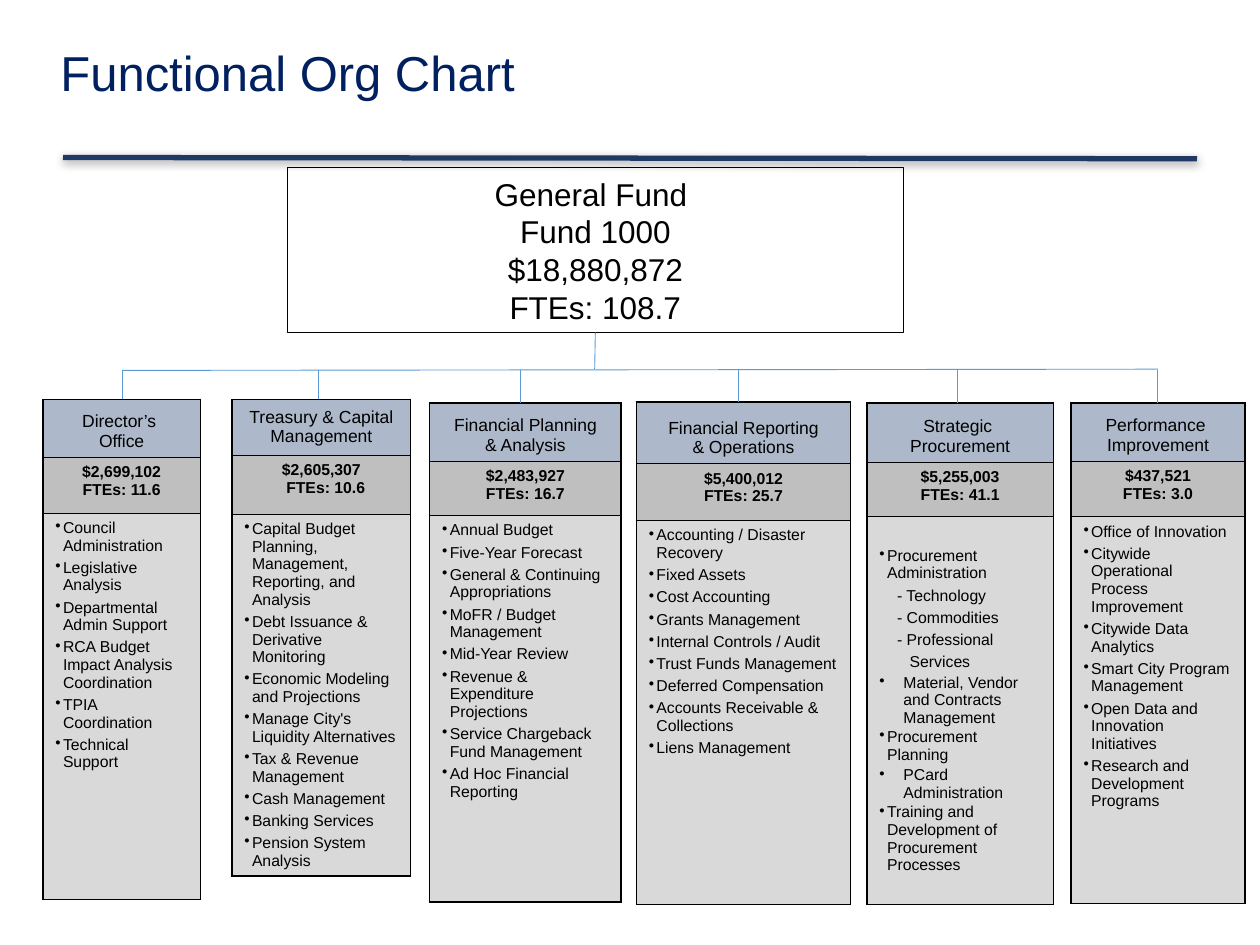
from lxml.etree import SubElement
from pptx import Presentation
from pptx.dml.color import RGBColor
from pptx.enum.shapes import MSO_CONNECTOR, MSO_SHAPE
from pptx.enum.text import MSO_ANCHOR, MSO_AUTO_SIZE, PP_ALIGN
from pptx.oxml.ns import qn
from pptx.util import Inches, Pt

BLACK, NAVY, BLUE = "000000", "002060", "5B9BD5"
FILLS = ("ADB9CA", "BFBFBF", "D9D9D9")
BAR = 29.4
TOP, MID, LOW = MSO_ANCHOR.TOP, MSO_ANCHOR.MIDDLE, MSO_ANCHOR.BOTTOM

# Item kinds: left indent, first-line indent, spaced, bulleted
KINDS = {
    "main": (0.6, -0.6, True, True),
    "wide": (1.9, -1.9, False, True),
    "dash": (1.4, 0, True, False),
    "tail": (2.4, 0, True, False),
}

# Units: left, top, width, row heights, drop x, head anchor, body anchor
UNITS = [
    (3.4, 31.7, 12.5, (4.6, 4.4, 30.7), 9.7, LOW, TOP,
     ["Director’s ", "Office"], "$2,699,102", "FTEs: 11.6",
     ["Council Administration", "Legislative Analysis",
      "Departmental Admin Support",
      "RCA Budget Impact Analysis Coordination",
      "TPIA Coordination", "Technical Support"]),
    (18.4, 31.7, 14.2, (4.4, 4.7, 27.2), 25.3, MID, TOP,
     ["Treasury & Capital Management"], "$2,605,307", "FTEs: 10.6",
     ["Capital Budget Planning, Management, Reporting, and Analysis",
      "Debt Issuance & Derivative Monitoring",
      "Economic Modeling and Projections",
      "Manage City's Liquidity Alternatives",
      "Tax & Revenue Management", "Cash Management",
      "Banking Services", "Pension System Analysis"]),
    (34.1, 32, 15.2, (4.6, 4.3, 30.7), 41.3, LOW, TOP,
     ["Financial Planning", "& Analysis"], "$2,483,927", "FTEs: 16.7",
     ["Annual Budget", "Five-Year Forecast",
      "General & Continuing Appropriations",
      "MoFR / Budget Management", "Mid-Year Review",
      "Revenue & Expenditure Projections",
      "Service Chargeback Fund Management",
      "Ad Hoc Financial Reporting"]),
    (50.5, 31.9, 17, (4.9, 4.5, 30.5), 58.6, LOW, TOP,
     ["Financial Reporting", "& Operations"], "$5,400,012", "FTEs: 25.7",
     ["Accounting / Disaster Recovery", "Fixed Assets",
      "Cost Accounting", "Grants Management",
      "Internal Controls / Audit", "Trust Funds Management",
      "Deferred Compensation", "Accounts Receivable & Collections",
      "Liens Management"]),
    (68.8, 32, 14.8, (4.7, 4.3, 30.8), 76, LOW, MID,
     ["Strategic ", "Procurement"], "$5,255,003", "FTEs: 41.1",
     ["Procurement Administration", ("dash", "- Technology"),
      ("dash", "- Commodities"), ("dash", "- Professional"),
      ("tail", "Services"),
      ("wide", "Material, Vendor and Contracts Management"),
      "Procurement Planning", ("wide", "PCard Administration"),
      "Training and Development of Procurement Processes"]),
    (85, 32, 13.8, (4.6, 4.4, 30.7), 91.9, LOW, TOP,
     ["Performance ", "Improvement"], "$437,521", "FTEs: 3.0",
     ["Office of Innovation", "Citywide Operational Process Improvement",
      "Citywide Data Analytics", "Smart City Program Management",
      "Open Data and Innovation Initiatives",
      "Research and Development Programs"]),
]


def grid(*cells):
    """Turn counts of grid cells, 100 by 75 on the slide, into lengths."""
    return [Inches(n / 10) for n in cells]


def tint(code):
    """Turn a hex string into a colour."""
    return RGBColor.from_string(code)


def write(para, text, size, bold=False, color=BLACK):
    """Add one run to a paragraph."""
    run = para.add_run()
    run.text = text
    font = run.font
    font.name, font.size, font.bold = "Arial", Pt(size), bold
    font.color.rgb = tint(color)


def paras(frame, count):
    """Return the given number of paragraphs of a frame."""
    return [frame.paragraphs[0]] + [
        frame.add_paragraph() for _ in range(count - 1)]


def center(frame, lines, size, bold=False):
    """Write centred lines."""
    for para, text in zip(paras(frame, len(lines)), lines):
        para.alignment = PP_ALIGN.CENTER
        write(para, text, size, bold)


def bullets(frame, items):
    """Write the duties of one unit."""
    for pos, (para, item) in enumerate(zip(paras(frame, len(items)), items)):
        kind, text = ("main", item) if isinstance(item, str) else item
        left, first, spaced, mark = KINDS[kind]
        props = para._p.get_or_add_pPr()
        for name, size in zip(("marL", "indent"), grid(left, first)):
            props.set(name, str(size))
        if mark:
            SubElement(props, qn("a:buChar"), char="•")
        if spaced:
            para.space_before = Pt(1 if pos else 0)
            para.space_after = Pt(1.6)
        write(para, text, 9)


def edge(cell, row):
    """Draw the borders of a cell, thick on the table's outside."""
    props = cell._tc.get_or_add_tcPr()
    widths = {"L": 1, "R": 1, "T": 0.25 if row else 1,
              "B": 1 if row == 2 else 0.25}
    for side, width in widths.items():
        line = SubElement(props, qn("a:ln" + side), w=str(Pt(width)))
        SubElement(SubElement(line, qn("a:solidFill")),
                   qn("a:srgbClr"), val=BLACK)


def unit(shapes, left, top, width, rows, drop, head, body,
         name, cost, staff, items):
    """Add one unit's table and its drop line."""
    table = shapes.add_table(
        3, 1, *grid(left, top, width, sum(rows))).table
    table.first_row = table.horz_banding = False
    for pos, high in enumerate(grid(*rows)):
        table.rows[pos].height = high
        cell = table.cell(pos, 0)
        edge(cell, pos)
        cell.fill.solid()
        cell.fill.fore_color.rgb = tint(FILLS[pos])
        cell.vertical_anchor = (head, TOP, body)[pos]
    center(table.cell(0, 0).text_frame, name, 10)
    center(table.cell(1, 0).text_frame, [cost, staff], 9, True)
    bullets(table.cell(2, 0).text_frame, items)
    if len(name) == 1:
        para = table.cell(1, 0).text_frame.paragraphs[1]
        para._p.get_or_add_pPr().set("marL", str(Pt(5)))
    link(shapes, drop, top, drop, BAR)


def link(shapes, *ends, color=BLUE, width=0.5):
    """Add a straight line and return it with its effect list."""
    line = shapes.add_connector(MSO_CONNECTOR.STRAIGHT, *grid(*ends))
    line.line.color.rgb = tint(color)
    line.line.width = Pt(width)
    return line, SubElement(line._element.spPr, qn("a:effectLst"))


def rule(shapes):
    """Add the shaded rule below the title."""
    _, list_ = link(shapes, 5, 12.5, 95, 12.6, color="203864", width=3)
    shade = SubElement(list_, qn("a:outerShdw"), blurRad=str(Pt(5)),
                       dist=str(Pt(1.6)), dir="5400000", rotWithShape="0")
    ink = SubElement(shade, qn("a:srgbClr"), val=BLACK)
    SubElement(ink, qn("a:alpha"), val="38000")


def title(shape, text):
    """Place and fill the title."""
    shape.left, shape.top, shape.width, shape.height = grid(4.8, 3.4, 68.6, 9.2)
    frame = shape.text_frame
    frame.auto_size = MSO_AUTO_SIZE.NONE
    frame.vertical_anchor = TOP
    frame.margin_left = frame.margin_right = frame.margin_bottom = 0
    frame.margin_top = Inches(0.05)
    para = frame.paragraphs[0]
    para.alignment, para.line_spacing = PP_ALIGN.LEFT, 0.9
    write(para, text, 28, color=NAVY)


def fund(shapes, lines):
    """Add the fund box and return it."""
    box = shapes.add_shape(MSO_SHAPE.RECTANGLE, *grid(22.8, 13.3, 48.9, 13.1))
    box.shadow.inherit = False
    box.fill.background()
    box.line.color.rgb = tint(BLACK)
    box.line.width = Pt(0.75)
    center(box.text_frame, lines, 18)
    return box


def main():
    """Build the slide."""
    deck = Presentation()
    deck.slide_width, deck.slide_height = grid(100, 75)
    shapes = deck.slides.add_slide(deck.slide_layouts[5]).shapes
    rule(shapes)
    title(shapes.title, "Functional Org Chart")
    box = fund(shapes, ["General Fund ", "Fund 1000",
                        "$18,880,872", "FTEs: 108.7"])
    for data in UNITS:
        unit(shapes, *data)
    link(shapes, UNITS[0][4], BAR, UNITS[-1][4], BAR - 0.1)
    trunk, _ = link(shapes, 47.2, BAR - 0.1, 47.2, 26.4)
    trunk.end_connect(box, 2)
    deck.save("out.pptx")


if __name__ == "__main__":
    main()
